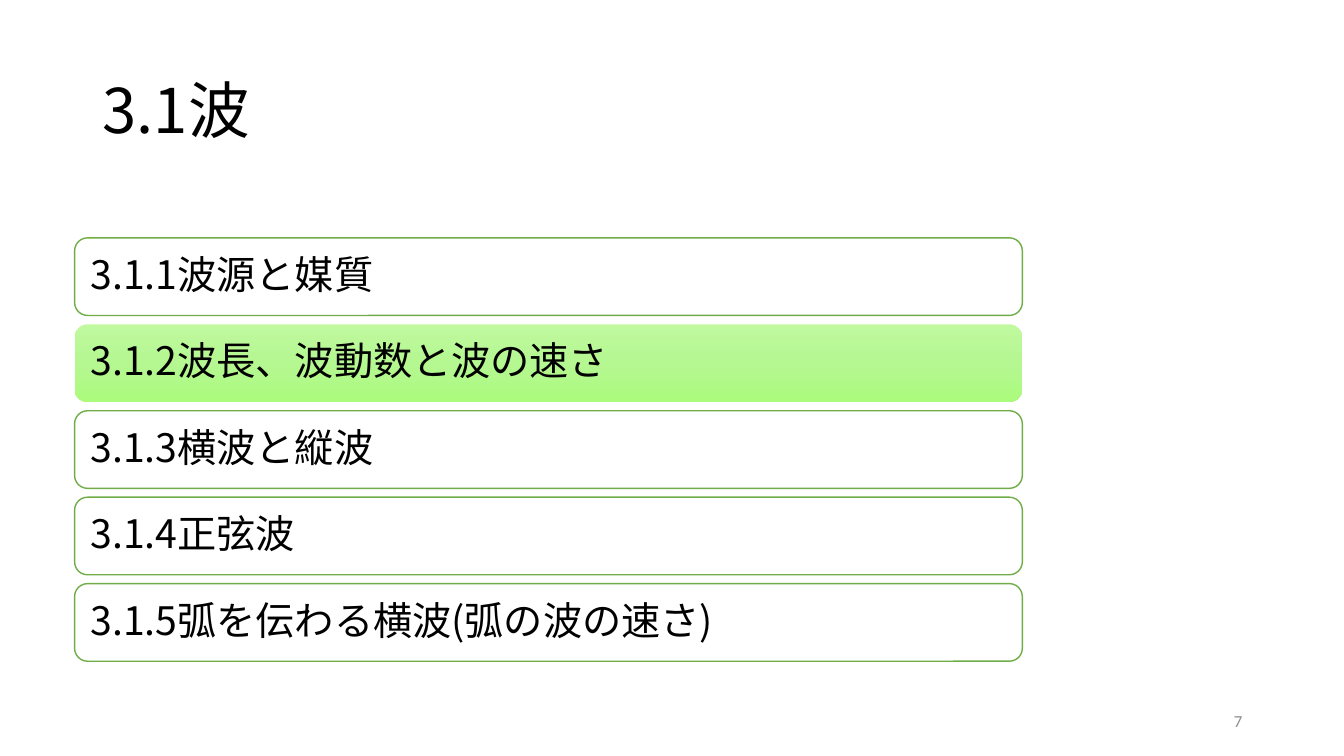
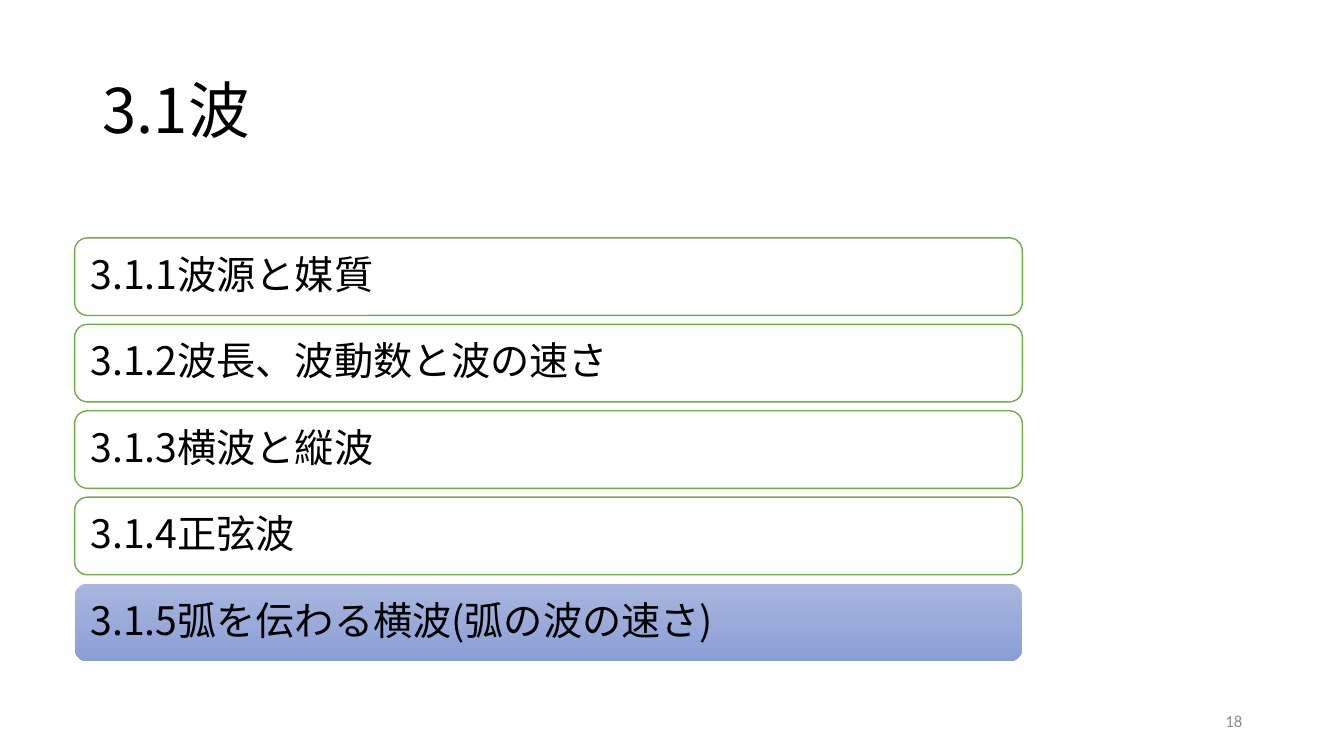
from copy import deepcopy

from lxml import etree
from pptx import Presentation
from pptx.dml.color import RGBColor
from pptx.enum import shapes, text
from pptx.oxml import ns
from pptx.util import Inches, Pt

TITLE = "3.1波"
SECTIONS = [
    "3.1.1波源と媒質",
    "3.1.2波長、波動数と波の速さ",
    "3.1.3横波と縦波",
    "3.1.4正弦波",
    "3.1.5弧を伝わる横波(弧の波の速さ)",
]

BLACK = RGBColor(0x00, 0x00, 0x00)
WHITE = RGBColor(0xFF, 0xFF, 0xFF)
GRAY = RGBColor(0x8C, 0x8C, 0x8C)
GREEN = RGBColor(0x70, 0xAD, 0x47)
GREEN_FADE = [RGBColor(0xC0, 0xF9, 0x9F), RGBColor(0xB5, 0xF7, 0x91), RGBColor(0xAB, 0xFB, 0x7D)]
BLUE_FADE = [RGBColor(0xA8, 0xB7, 0xDF), RGBColor(0x9A, 0xAB, 0xD9), RGBColor(0x88, 0x9E, 0xD7)]

SLIDES = [
    {"number": "7", "current": 1, "fade": GREEN_FADE},
    {"number": "18", "current": 4, "fade": BLUE_FADE},
]

MAIN_FONT = "Noto Sans CJK JP"
NUMBER_FONT = "Calibri"
BAR_LEFT, BAR_WIDTH, BAR_HEIGHT = Inches(0.74), Inches(9.4), Inches(0.77)
FIRST_TOP, LAST_TOP = Inches(2.36), Inches(5.79)
BAR_STEP = (LAST_TOP - FIRST_TOP) // (len(SECTIONS) - 1)
BAR_INSET = Inches(0.12)


def write(shape, words, size, color=BLACK, name=MAIN_FONT,
          align=text.PP_ALIGN.LEFT, spacing=0.9):
    frame = shape.text_frame
    frame.word_wrap = True
    frame.vertical_anchor = text.MSO_ANCHOR.MIDDLE
    paragraph = frame.paragraphs[0]
    paragraph.text = words
    paragraph.alignment = align
    paragraph.line_spacing = spacing
    font = paragraph.font
    font.size = Pt(size)
    font.name = name
    font.color.rgb = color
    properties = paragraph._p.pPr.find(ns.qn("a:defRPr"))
    etree.SubElement(properties, ns.qn("a:ea"), typeface=name)


def fade_fill(shape, colors):
    shape.fill.gradient()
    shape.fill.gradient_angle = 270
    stop_list = shape._element.spPr.find(ns.qn("a:gradFill")).find(ns.qn("a:gsLst"))
    stop_list.insert(1, deepcopy(stop_list[0]))
    for index, (stop, color) in enumerate(zip(shape.fill.gradient_stops, colors)):
        stop.position = index / (len(colors) - 1)
        stop.color.rgb = color


def add_bar(slide, index, words, fade=None):
    bar = slide.shapes.add_shape(
        shapes.MSO_SHAPE.ROUNDED_RECTANGLE,
        BAR_LEFT, FIRST_TOP + index * BAR_STEP, BAR_WIDTH, BAR_HEIGHT)
    bar.shadow.inherit = False
    if fade:
        fade_fill(bar, fade)
        bar.line.fill.background()
    else:
        bar.fill.solid()
        bar.fill.fore_color.rgb = WHITE
        bar.line.color.rgb = GREEN
        bar.line.width = Pt(1)
    frame = bar.text_frame
    frame.margin_left = frame.margin_right = BAR_INSET
    frame.margin_top = frame.margin_bottom = 0
    write(bar, words, 28)


def add_slide(presentation, number, current, fade):
    slide = presentation.slides.add_slide(presentation.slide_layouts[6])
    title = slide.shapes.add_textbox(Inches(0.92), Inches(0.4), Inches(11.5), Inches(1.45))
    write(title, TITLE, 44)
    for index, words in enumerate(SECTIONS):
        add_bar(slide, index, words, fade if index == current else None)
    page = slide.shapes.add_textbox(Inches(9.42), Inches(6.95), Inches(3), Inches(0.4))
    write(page, number, 12, GRAY, NUMBER_FONT, text.PP_ALIGN.RIGHT, 1.0)


def main():
    presentation = Presentation()
    presentation.slide_width = Inches(13.33)
    presentation.slide_height = Inches(7.5)
    for content in SLIDES:
        add_slide(presentation, **content)
    presentation.save("out.pptx")


if __name__ == "__main__":
    main()
